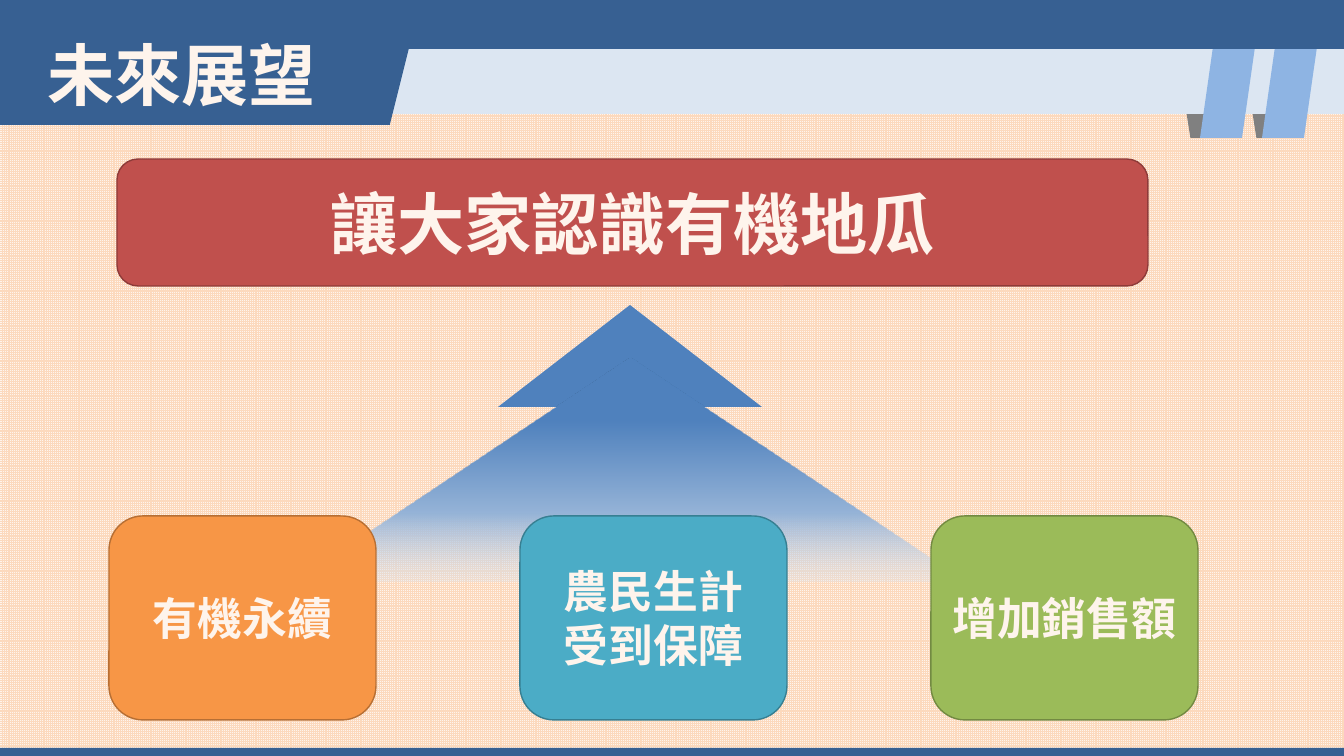
"""Build the outlook slide: three goals leading up to one headline."""
from lxml.etree import SubElement
from pptx import Presentation
from pptx.dml.color import RGBColor
from pptx.enum.dml import MSO_PATTERN
from pptx.enum.shapes import MSO_SHAPE
from pptx.enum.text import MSO_ANCHOR, MSO_AUTO_SIZE, PP_ALIGN
from pptx.oxml.ns import qn
from pptx.util import Emu, Pt

W, H = 1344, 756
EMU_PER_PX = 914400 / 100.8
CJK = "Noto Sans CJK SC"
C = {
    "cream": "FEF4EC", "peach": "FCD9BD", "navy": "376092", "pale": "DCE6F2",
    "sky": "8EB4E3", "grey": "808080", "blue": "4F81BD", "mist": "95B3D7",
    "orange": "F79646", "orange_line": "B76F34", "teal": "4BACC6", "teal_line": "377F92",
    "green": "9BBB59", "green_line": "738A42", "red": "C0504D", "red_line": "8E3B39",
}

TITLE = "未來展望"
HEADLINE = ["讓大家認識有機地瓜"]
GOALS = [
    (["有機永續"], "orange"),
    (["農民生計", "受到保障"], "teal"),
    (["增加銷售額"], "green"),
]
GOAL_LEFT, GOAL_STEP = 109, 411
ARROW_FADE = [(28, "blue", 100), (69, "mist", 100), (100, "pale", 30)]
RIBBON_FOLDS = [1241, 1175]
RIBBONS = [1200, 1262]


def px(n):
    return Emu(round(n * EMU_PER_PX))


def rgb(name):
    return RGBColor.from_string(C[name])


def add_block(s, kind, box, color, line=None):
    sp = s.shapes.add_shape(kind, *map(px, box))
    sp.shadow.inherit = False
    sp.fill.solid()
    sp.fill.fore_color.rgb = rgb(color)
    if line:
        sp.line.color.rgb = rgb(line)
        sp.line.width = Pt(1)
    else:
        sp.line.fill.background()
    return sp


def write(tf, lines, size, font, align):
    for i, text in enumerate(lines):
        p = tf.add_paragraph() if i else tf.paragraphs[0]
        p.alignment = align
        r = p.add_run()
        r.text = text
        r.font.size = Pt(size)
        r.font.bold = True
        r.font.name = font
        r.font.color.rgb = rgb("cream")
        SubElement(r.font._element, qn("a:ea"), typeface=CJK)


def add_card(s, box, lines, size, color):
    sp = add_block(s, MSO_SHAPE.ROUNDED_RECTANGLE, box, color, color + "_line")
    tf = sp.text_frame
    tf.word_wrap = True
    tf.vertical_anchor = MSO_ANCHOR.MIDDLE
    write(tf, lines, size, "Arial", PP_ALIGN.CENTER)


def fade_down(sp, stops):
    sp.fill.gradient()
    grad = sp.element.spPr.find(qn("a:gradFill"))
    for child in list(grad):
        grad.remove(child)
    gs_list = SubElement(grad, qn("a:gsLst"))
    for pos, color, alpha in stops:
        gs = SubElement(gs_list, qn("a:gs"), pos=str(pos * 1000))
        clr = SubElement(gs, qn("a:srgbClr"), val=C[color])
        if alpha < 100:
            SubElement(clr, qn("a:alpha"), val=str(alpha * 1000))
    SubElement(grad, qn("a:lin"), ang="5400000", scaled="0")


def add_arrow(s):
    add_block(s, MSO_SHAPE.ISOSCELES_TRIANGLE, (498, 305, 264, 102), "blue")
    base = add_block(s, MSO_SHAPE.ISOSCELES_TRIANGLE, (294, 358, 672, 224), "blue")
    fade_down(base, ARROW_FADE)


def add_banner(s):
    for left in RIBBON_FOLDS:
        sp = add_block(s, MSO_SHAPE.PARALLELOGRAM, (left, 40, 62, 98), "grey")
        sp.element.spPr.find(qn("a:xfrm")).set("flipH", "1")
    add_block(s, MSO_SHAPE.RECTANGLE, (330, 10, W - 330, 104), "pale")
    for left in RIBBONS:
        add_block(s, MSO_SHAPE.PARALLELOGRAM, (left, 40, 56, 98), "sky")
    add_block(s, MSO_SHAPE.RECTANGLE, (0, 0, W, 49), "navy")
    add_block(s, MSO_SHAPE.PARALLELOGRAM, (-27, 0, 448, 125), "navy")
    add_block(s, MSO_SHAPE.RECTANGLE, (0, H - 8, W, 8), "navy")


def place_title(s):
    sp = s.shapes.title
    sp.left, sp.top, sp.width, sp.height = map(px, (37, 28, 291, 92))
    tf = sp.text_frame
    tf.word_wrap = False
    tf.auto_size = MSO_AUTO_SIZE.SHAPE_TO_FIT_TEXT
    tf.vertical_anchor = MSO_ANCHOR.TOP
    write(tf, [TITLE], 48, CJK, PP_ALIGN.LEFT)
    sp.element.getparent().append(sp.element)


def main():
    prs = Presentation()
    prs.slide_width, prs.slide_height = px(W), px(H)
    s = prs.slides.add_slide(prs.slide_layouts[5])
    fill = s.background.fill
    fill.patterned()
    fill.pattern = MSO_PATTERN.SMALL_GRID
    fill.fore_color.rgb = rgb("peach")
    fill.back_color.rgb = rgb("cream")
    add_arrow(s)
    add_banner(s)
    place_title(s)
    for i, (lines, color) in enumerate(GOALS):
        add_card(s, (GOAL_LEFT + i * GOAL_STEP, 516, 267, 204), lines, 32, color)
    add_card(s, (117, 159, 1031, 127), HEADLINE, 48, "red")
    prs.save("out.pptx")


if __name__ == "__main__":
    main()
